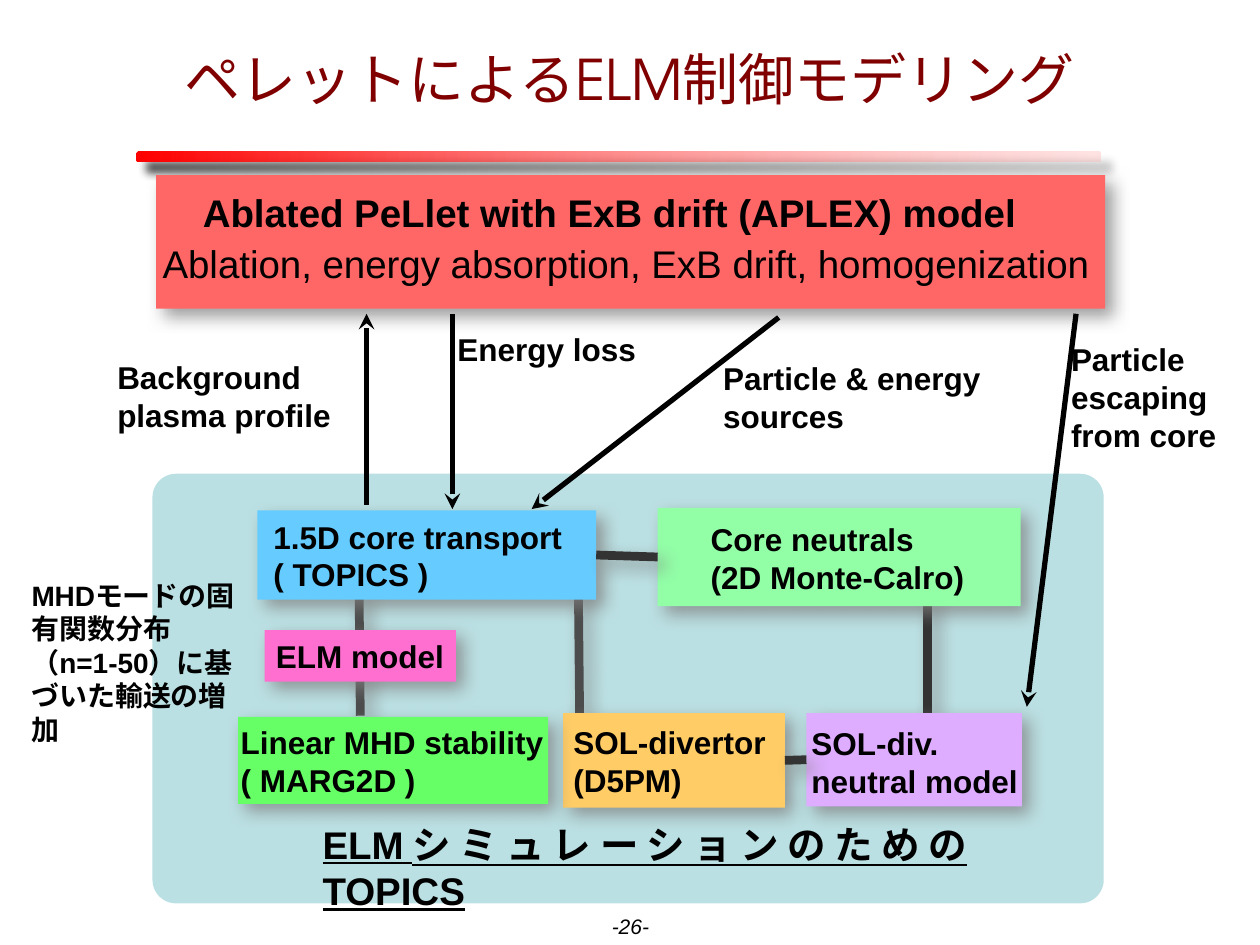
from dataclasses import dataclass

from lxml import etree
from pptx import Presentation
from pptx import util as u
from pptx.dml.color import RGBColor
from pptx.enum import shapes, text
from pptx.oxml.ns import qn

Pt = u.Pt
RECT = shapes.MSO_SHAPE.RECTANGLE
ROUND = shapes.MSO_SHAPE.ROUNDED_RECTANGLE
LEFT, CENTER, JUSTIFY = (text.PP_ALIGN.LEFT, text.PP_ALIGN.CENTER,
                         text.PP_ALIGN.JUSTIFY)


@dataclass(frozen=True)
class Theme:
    ink: str = "000000"
    title: str = "800000"
    panel: str = "BBE0E3"
    header: str = "FF6666"
    fade: tuple = ("FF0000", "FFA2A2")
    light: str = "4C4C4C"
    dark: str = "333333"
    shade: str = "808080"
    font: str = "Arial"
    display: str = "TeX Gyre Adventor"
    huge: int = 32
    large: int = 22
    body: int = 18
    note: int = 16
    small: int = 12


T = Theme()

# key: box place, fill, label place, label
MODELS = {
    "core": ((147, 291.6, 193.7, 51.1), "66CCFF",
             (152.6, 292.3, 181.4, 50.4), "1.5D core transport\n( TOPICS )"),
    "elm": ((151.2, 360, 109.4, 29.5), "FF6FCF",
            (154.1, 360.7, 104.4, 28.8), "ELM model"),
    "neutral": ((375.8, 290.2, 207.4, 56.2), "92FFA7",
                (402.5, 293.8, 154.8, 50.4),
                "Core neutrals\n(2D Monte-Calro)"),
    "sol": ((321.8, 407.5, 126.7, 54), "FFCC66",
            (324, 409.7, 123.1, 50.4), "SOL-divertor\n(D5PM)"),
    "mhd": ((136.1, 409.7, 177.1, 49.7), "66FF66",
            (133.9, 409.7, 182, 50.4), "Linear MHD stability\n( MARG2D )"),
    "div": ((460.8, 407.5, 123.1, 53.3), "DEADFF",
            (460.1, 410.4, 126, 50.4), "SOL-div.\nneutral model"),
}

# vertical links that run behind the model boxes
LINKS = [
    ((205.2, 338.4), (205.9, 409), T.light),
    ((330.5, 336.2), (331.2, 407.5), T.light),
    ((530, 339.1), (530, 409), T.dark),
]
# links between facing sides
JOINS = [("core", "neutral"), ("sol", "div")]

# tip, then start
ARROWS = [
    ((209.5, 179.3), (209.5, 288.7)),
    ((258.5, 290.9), (258.5, 179.3)),
    ((303.8, 290.9), (445, 181.4)),
    ((586.8, 403.9), (614.9, 179.3)),
]

FLOWS = [
    ((63.4, 200.9, 137.5, 50.4), "Background\nplasma profile"),
    ((257.8, 185, 137.5, 28.8), "Energy loss"),
    ((409.7, 201.6, 168.5, 50.4), "Particle & energy sources"),
    ((608.4, 190.8, 104.4, 72), "Particle\nescaping\nfrom core"),
]


def points(place):
    return [Pt(n) for n in place]


def rgb(code):
    return RGBColor.from_string(code)


def add(parent, tag, **attrs):
    return etree.SubElement(parent, qn(tag), attrs)


def shadow(parent, color=T.shade, blur=10, dist=6):
    """Put an outer shadow, falling to the lower right, in an effect list."""
    outer = add(parent, "a:outerShdw", blurRad=str(Pt(blur)),
                dist=str(Pt(dist)), dir="2700000", algn="ctr",
                rotWithShape="0")
    tint = add(outer, "a:srgbClr", val=color)
    add(tint, "a:alpha", val="75000")


def effects(shape):
    return shape._element.spPr.find(qn("a:effectLst"))


def write(slide, place, words, size=T.body, bold=True, italic=False,
          under=False, color=T.ink, font=T.font, align=LEFT, inset=3.6,
          middle=False, wrap=True):
    box = slide.shapes.add_textbox(*points(place))
    frame = box.text_frame
    frame.word_wrap = wrap
    frame.margin_left = frame.margin_right = Pt(inset)
    frame.margin_top = frame.margin_bottom = Pt(inset)
    frame.vertical_anchor = (text.MSO_ANCHOR.MIDDLE if middle
                             else text.MSO_ANCHOR.TOP)
    frame.text = words
    for para in frame.paragraphs:
        para.alignment = align
        for run in para.runs:
            face = run.font
            face.name, face.size = font, Pt(size)
            face.bold, face.italic, face.underline = bold, italic, under
            face.color.rgb = rgb(color)


def block(slide, place, fill, kind=RECT, raised=True):
    shape = slide.shapes.add_shape(kind, *points(place))
    shape.fill.solid()
    shape.fill.fore_color.rgb = rgb(fill)
    shape.line.fill.background()
    shape.shadow.inherit = False
    if raised:
        shadow(effects(shape))
    return shape


def rule(slide, place):
    """Draw the fading bar below the title."""
    bar = block(slide, place, T.fade[0], ROUND, raised=False)
    bar.adjustments[0] = 0.167
    bar.fill.gradient()
    bar.fill.gradient_angle = 0
    for stop, code in zip(bar.fill.gradient_stops, T.fade):
        stop.color.rgb = rgb(code)
    last = bar._element.spPr.findall(".//" + qn("a:srgbClr"))[-1]
    add(last, "a:alpha", val="30000")
    shadow(effects(bar), T.ink, 5, 8.5)


def line(slide, start, end, color, width):
    wire = slide.shapes.add_connector(
        shapes.MSO_CONNECTOR.STRAIGHT, *points(start + end))
    wire.line.color.rgb = rgb(color)
    wire.line.width = Pt(width)
    add(wire._element.spPr, "a:effectLst")
    return wire


def link(slide, start, end, color=T.dark):
    wire = line(slide, start, end, color, 5)
    shadow(effects(wire))
    return wire


def arrow(slide, tip, start):
    wire = line(slide, tip, start, T.ink, 3)
    add(wire.line._get_or_add_ln(), "a:headEnd", type="stealth")


def models(slide):
    for start, end, color in LINKS:
        link(slide, start, end, color)
    boxes = {}
    for key, (place, fill, spot, label) in MODELS.items():
        boxes[key] = block(slide, place, fill)
        write(slide, spot, label, wrap=key != "elm")
    for left, right in JOINS:
        wire = link(slide, (0, 0), (0, 0))
        wire.begin_connect(boxes[left], 3)
        wire.end_connect(boxes[right], 1)


def main():
    deck = Presentation()
    deck.slide_width, deck.slide_height = Pt(720), Pt(540)
    slide = deck.slides.add_slide(deck.slide_layouts[6])

    write(slide, (54, 25.2, 612, 38.9), "ペレットによるELM制御モデリング",
          size=T.huge, bold=False, color=T.title, font=T.display,
          align=CENTER, inset=0, middle=True)
    write(slide, (347, 522, 26.6, 14.4), "-26-", size=T.small, bold=False,
          italic=True, align=CENTER, inset=0, middle=True, wrap=False)
    rule(slide, (77.8, 86.4, 550.8, 5.8))

    panel = block(slide, (87.1, 270.7, 543.6, 245.5), T.panel, ROUND,
                  raised=False)
    panel.adjustments[0] = 0.055
    write(slide, (184.3, 479.5, 368.6, 31.7),
          "ELMシミュレーションのためのTOPICS", size=T.large, under=True,
          align=JUSTIFY, inset=0, middle=True)
    models(slide)

    block(slide, (89.3, 100.1, 542.2, 76.3), T.header)
    write(slide, (112.3, 104.4, 491.8, 33.1),
          "Ablated PeLlet with ExB drift (APLEX) model", size=T.large)
    write(slide, (89.3, 133.9, 542.2, 33.1),
          "Ablation, energy absorption, ExB drift, homogenization",
          size=T.large, bold=False)

    for tip, start in ARROWS:
        arrow(slide, tip, start)
    for place, label in FLOWS:
        write(slide, place, label)
    write(slide, (14.4, 326.9, 128.9, 85),
          "MHDモードの固有関数分布（n=1-50）に基づいた輸送の増加",
          size=T.note)
    deck.save("out.pptx")


if __name__ == "__main__":
    main()
